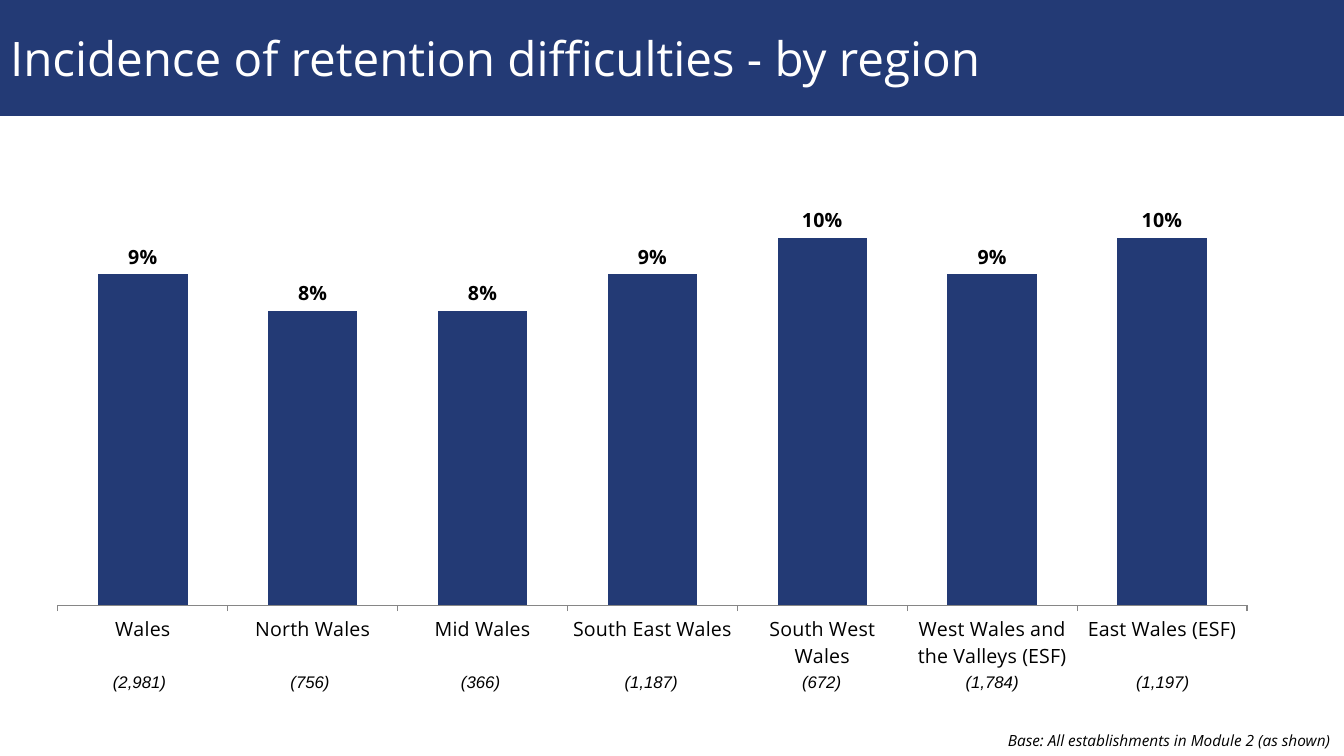
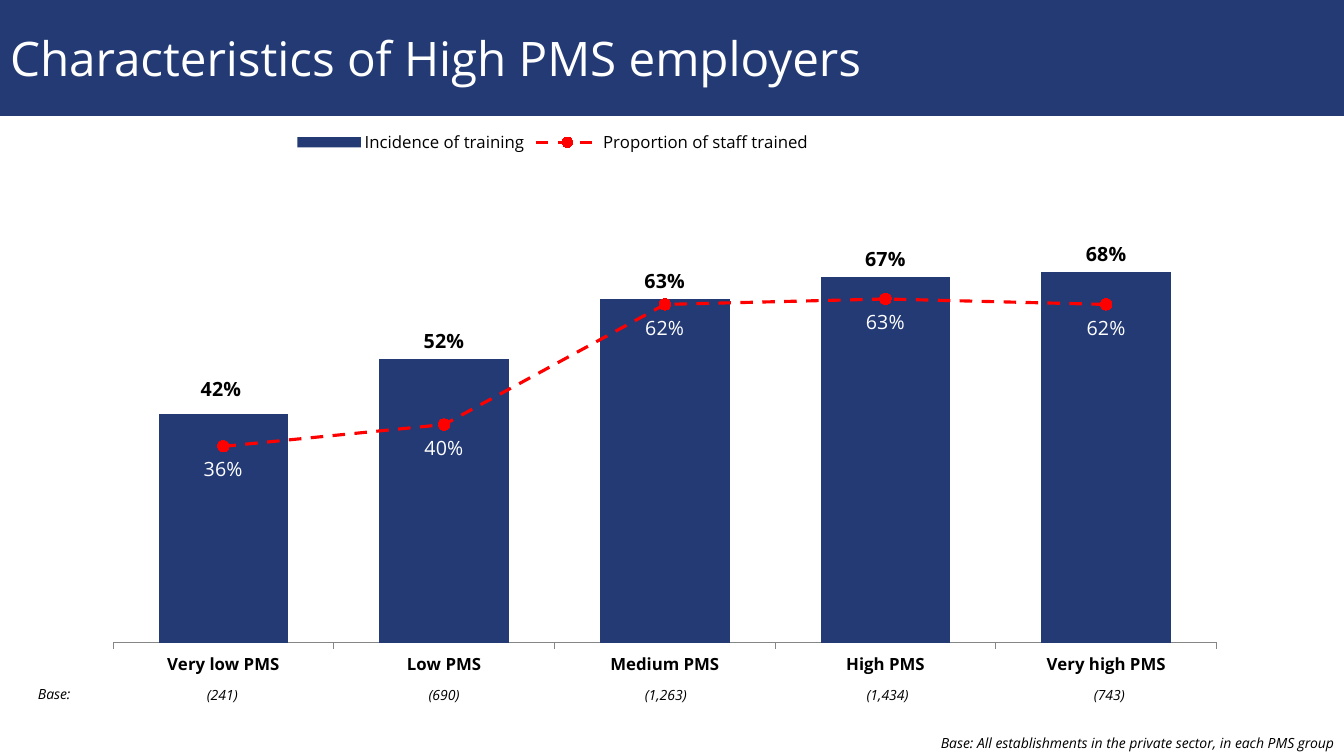
from dataclasses import dataclass

from pptx import Presentation
from pptx.chart.data import CategoryChartData
from pptx.dml.color import RGBColor
from pptx.enum.chart import XL_CHART_TYPE as ChartType
from pptx.enum.chart import XL_LABEL_POSITION as LabelPosition
from pptx.enum.chart import XL_LEGEND_POSITION as LegendPosition
from pptx.enum.chart import XL_MARKER_STYLE as MarkerStyle
from pptx.enum.chart import XL_TICK_MARK as TickMark
from pptx.enum.dml import MSO_LINE as Dash
from pptx.enum.text import MSO_ANCHOR as Anchor
from pptx.enum.text import MSO_AUTO_SIZE as AutoSize
from pptx.enum.text import PP_ALIGN as Align
from pptx.oxml import parse_xml
from pptx.oxml.ns import nsdecls, qn
from pptx.util import Pt


@dataclass(frozen=True)
class Theme:
    navy: RGBColor = RGBColor(0x23, 0x3A, 0x75)
    red: RGBColor = RGBColor(0xFF, 0x00, 0x00)
    black: RGBColor = RGBColor(0x00, 0x00, 0x00)
    white: RGBColor = RGBColor(0xFF, 0xFF, 0xFF)
    axis: RGBColor = RGBColor(0x86, 0x86, 0x86)
    font: str = "Open Sans"
    count_font: str = "Arial"
    title_size: int = 34
    chart_size: int = 18
    value_size: int = 14
    legend_size: int = 12


theme = Theme()

PAGES = [
    dict(
        title="Incidence of retention difficulties - by region",
        categories=["Wales", "North Wales", "Mid Wales", "South East Wales",
                    "South West Wales", "West Wales and the Valleys (ESF)",
                    "East Wales (ESF)"],
        series={"Series 1": [0.09, 0.08, 0.08, 0.09, 0.1, 0.09, 0.1]},
        chart_box=(39.6, 111.6, 888.5, 378.7),
        plot=dict(x=0.002, y=0.015, w=0.956, h=0.832),
        maximum=0.12, gap=90, axis_size=14, axis_bold=False,
        counts=["(2,981)", "(756)", "(366)", "(1,187)", "(672)", "(1,784)", "(1,197)"],
        count_box=(67.7, 476, 64, 22), count_step=121.8,
        count_size=12, count_font=theme.count_font,
        base="Base: All establishments in Module 2 (as shown)",
        base_box=(227.5, 517, 732.5, 23), base_size=11,
        base_format=dict(margins=(9.4, 5), spacing=1),
    ),
    dict(
        title="Characteristics of High PMS employers",
        categories=["Very low PMS", "Low PMS", "Medium PMS", "High PMS", "Very high PMS"],
        series={"Incidence of training": [0.42, 0.52, 0.63, 0.67, 0.68],
                "Proportion of staff trained": [0.36, 0.4, 0.62, 0.63, 0.62]},
        chart_box=(68.4, 82.1, 823.7, 423.4),
        plot=dict(x=0.015, y=0.154, w=0.957, h=0.737),
        maximum=0.8, gap=70, axis_size=12, axis_bold=True,
        counts=["(241)", "(690)", "(1,263)", "(1,434)", "(743)"],
        count_box=(105.1, 487, 107.3, 19.4), count_step=158.4,
        count_size=10, count_font=theme.font,
        base="Base: All establishments in the private sector, in each PMS group",
        base_box=(330.5, 514.8, 629.5, 25), base_size=10,
        base_format=dict(margins=(7.2, 3.6), spacing=1.5),
    ),
]


def add_label(page, text, box, size, font, align, margins=(7.2, 3.6), spacing=1):
    """Add a line of italic text; margins are the side and the top inset."""
    label = page.shapes.add_textbox(*[Pt(length) for length in box])
    frame = label.text_frame
    frame.word_wrap = True
    frame.margin_left = frame.margin_right = Pt(margins[0])
    frame.margin_top = frame.margin_bottom = Pt(margins[1])
    para = frame.paragraphs[0]
    para.alignment = align
    para.line_spacing = spacing
    span = para.add_run()
    span.text = text
    span.font.name = font
    span.font.size = Pt(size)
    span.font.italic = True
    span.font.color.rgb = theme.black


def chart_layout(modes, **fractions):
    """Return a c:layout element with the given mode tags and fractions."""
    values = "".join(f'<c:{name} val="{value}"/>' for name, value in fractions.items())
    return parse_xml(f'<c:layout {nsdecls("c")}><c:manualLayout>{modes}{values}'
                     "</c:manualLayout></c:layout>")


EDGE = '<c:xMode val="edge"/><c:yMode val="edge"/>'
INNER_EDGE = '<c:layoutTarget val="inner"/>' + EDGE

deck = Presentation()
deck.slide_width, deck.slide_height = Pt(960), Pt(540)
title_only = deck.slide_layouts.get_by_name("Title Only")

for content in PAGES:
    page = deck.slides.add_slide(title_only)

    # Title band
    band = page.shapes.title
    band.left, band.top, band.width, band.height = Pt(0), Pt(0), Pt(960), Pt(82.8)
    band.fill.solid()
    band.fill.fore_color.rgb = theme.navy
    band.text_frame.auto_size = AutoSize.NONE
    band.text_frame.vertical_anchor = Anchor.MIDDLE
    para = band.text_frame.paragraphs[0]
    para.alignment = Align.LEFT
    span = para.add_run()
    span.text = content["title"]
    span.font.name = theme.font
    span.font.size = Pt(theme.title_size)
    span.font.color.rgb = theme.white

    # Columns
    data = CategoryChartData(number_format="0%")
    data.categories = content["categories"]
    for name, values in content["series"].items():
        data.add_series(name, values)
    box = [Pt(length) for length in content["chart_box"]]
    chart = page.shapes.add_chart(ChartType.COLUMN_CLUSTERED, *box, data).chart
    chart.has_title = False
    chart.has_legend = False
    chart.font.name = theme.font
    chart.font.size = Pt(theme.chart_size)
    chart.font.color.rgb = theme.black

    plot_area = chart.element.find(".//" + qn("c:plotArea"))
    for old_layout in plot_area.findall(qn("c:layout")):
        plot_area.remove(old_layout)
    plot_area.insert(0, chart_layout(INNER_EDGE, **content["plot"]))

    value_axis = chart.value_axis
    value_axis.minimum_scale, value_axis.maximum_scale = 0, content["maximum"]
    value_axis.has_major_gridlines = False
    value_axis.visible = False
    category_axis = chart.category_axis
    category_axis.major_tick_mark = TickMark.OUTSIDE
    category_axis.format.line.color.rgb = theme.axis
    category_axis.format.line.width = Pt(0.75)
    category_axis.tick_labels.font.size = Pt(content["axis_size"])
    category_axis.tick_labels.font.bold = content["axis_bold"]

    columns = chart.plots[0]
    columns.gap_width = content["gap"]
    columns.vary_by_categories = False
    bars = columns.series[0]
    bars.format.fill.solid()
    bars.format.fill.fore_color.rgb = theme.navy
    labelled = [(bars, LabelPosition.OUTSIDE_END, theme.black, True)]

    # Second series as a dashed line on the same axes
    if len(content["series"]) > 1:
        bar_chart = plot_area.find(qn("c:barChart"))
        line_chart = parse_xml(
            f'<c:lineChart {nsdecls("c")}><c:grouping val="standard"/>'
            '<c:varyColors val="0"/><c:marker val="1"/></c:lineChart>')
        moved = bar_chart.findall(qn("c:ser"))[1]
        for bar_setting in moved.findall(qn("c:invertIfNegative")):
            moved.remove(bar_setting)
        line_chart.insert(2, moved)
        for axis in bar_chart.findall(qn("c:axId")):
            line_chart.append(parse_xml(f'<c:axId {nsdecls("c")} val="{axis.get("val")}"/>'))
        bar_chart.addnext(line_chart)

        trained = chart.plots[1].series[0]
        trained.smooth = False
        trained.format.line.color.rgb = theme.red
        trained.format.line.width = Pt(2.25)
        trained.format.line.dash_style = Dash.DASH
        trained.marker.style = MarkerStyle.CIRCLE
        trained.marker.size = 8
        trained.marker.format.fill.solid()
        trained.marker.format.fill.fore_color.rgb = theme.red
        trained.marker.format.line.color.rgb = theme.red
        labelled.append((trained, LabelPosition.BELOW, theme.white, False))

        chart.has_legend = True
        legend = chart.legend
        legend.position = LegendPosition.TOP
        legend.include_in_layout = False
        legend.font.size = Pt(theme.legend_size)
        legend_box = chart.element.find(".//" + qn("c:legend"))
        for old_layout in legend_box.findall(qn("c:layout")):
            legend_box.remove(old_layout)
        legend_box.find(qn("c:overlay")).addprevious(chart_layout(EDGE, x=0.17, y=0.02))

    for series, position, color, bold in labelled:
        labels = series.data_labels
        labels.show_value = True
        labels.number_format = "0%"
        labels.number_format_is_linked = False
        labels.position = position
        labels.font.size = Pt(theme.value_size)
        labels.font.bold = bold
        labels.font.color.rgb = color

    # The first column label is raised clear of the line
    if len(labelled) > 1:
        first_label = bars.points[0].data_label
        first_label.position = LabelPosition.OUTSIDE_END
        first_label.font.size = Pt(theme.value_size)
        first_label.font.bold = True
        first_label.font.color.rgb = theme.black
        label_index = chart.element.find(".//" + qn("c:dLbl")).find(qn("c:idx"))
        label_index.addnext(chart_layout("", x=-0.002, y=-0.012))
        add_label(page, "Base:", (20, 486, 107.3, 19.4), content["count_size"],
                  theme.font, Align.LEFT)

    # Base sizes under the columns, and the footnote
    left, top, width, height = content["count_box"]
    for index, count in enumerate(content["counts"]):
        add_label(page, count, (left + index * content["count_step"], top, width, height),
                  content["count_size"], content["count_font"], Align.CENTER)
    add_label(page, content["base"], content["base_box"], content["base_size"],
              theme.font, Align.RIGHT, **content["base_format"])

deck.save("out.pptx")
